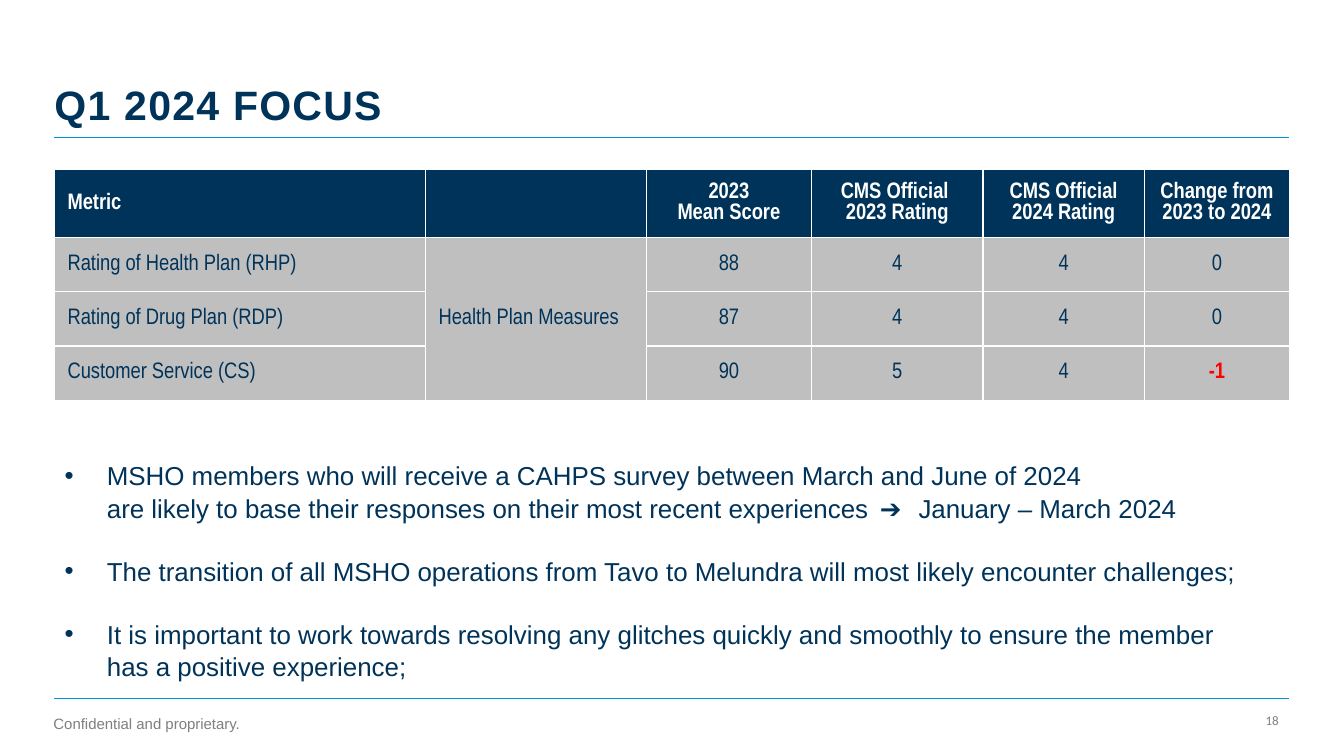
from dataclasses import dataclass

from lxml.etree import SubElement
from pptx import Presentation
from pptx.dml.color import RGBColor
from pptx.enum.shapes import MSO_CONNECTOR
from pptx.enum.text import MSO_ANCHOR as Anchor, MSO_AUTO_SIZE as AutoSize, PP_ALIGN as Align
from pptx.oxml.ns import qn
from pptx.slide import Slide
from pptx.util import Emu, Pt

EMU_PER_PX = 9144
NAVY = RGBColor(0x00, 0x33, 0x59)
BLUE = RGBColor(0x00, 0x94, 0xD7)
GREY = RGBColor(0x7F, 0x7F, 0x7F)
SILVER = RGBColor(0xBF, 0xBF, 0xBF)
RED = RGBColor(0xFF, 0x00, 0x00)
WHITE = RGBColor(0xFF, 0xFF, 0xFF)

LEFT, RIGHT = 54, 1278
RULE_TOPS = (136, 693)
COLUMN_WIDTHS = (368, 219, 164, 170, 160, 144)
ROW_HEIGHTS = (67, 54, 54, 54)
TEXT_COLUMNS = 2
MEASURE_COLUMN = 1
ARROW = " ➔ "

TABLE_ROWS = (
    ("Metric", "", "2023\nMean Score", "CMS Official \v2023 Rating",
     "CMS Official 2024 Rating", "Change from 2023 to 2024"),
    ("Rating of Health Plan (RHP)", "Health Plan Measures", "88", "4", "4", "0"),
    ("Rating of Drug Plan (RDP)", "", "87", "4", "4", "0"),
    ("Customer Service (CS)", "", "90", "5", "4", "-1"),
)
BULLETS = (
    "MSHO members who will receive a CAHPS survey between March and June of 2024 \v"
    "are likely to base their responses on their most recent experiences ➔ January – March 2024",
    "The transition of all MSHO operations from Tavo to Melundra will most likely encounter challenges;",
    "It is important to work towards resolving any glitches quickly and smoothly to ensure the member\v"
    "has a positive experience;",
)


@dataclass(frozen=True)
class Box:
    left: int
    top: int
    width: int
    height: int

    def emu(self) -> tuple[Emu, ...]:
        return tuple(px(n) for n in (self.left, self.top, self.width, self.height))


@dataclass(frozen=True)
class FooterText:
    text: str
    box: Box
    margins: tuple[int, int]
    font_name: str
    size: float
    alignment: Align


FOOTERS = (
    FooterText("Confidential and proprietary.", Box(53, 706, 218, 21), (0, 0),
               "Arial", 10.7, Align.LEFT),
    FooterText("18", Box(967, 707, 311, 20), (10, 5), "Calibri", 9.3, Align.RIGHT),
)


def px(length: int) -> Emu:
    return Emu(length * EMU_PER_PX)


def style_font(font, name: str, size: float, color: RGBColor, bold: bool = False) -> None:
    font.name = name
    font.size = Pt(size)
    font.bold = bold
    font.color.rgb = color


def set_margins(target, horizontal: int, vertical: int) -> None:
    target.margin_left = target.margin_right = px(horizontal)
    target.margin_top = target.margin_bottom = px(vertical)


def place(shape, box: Box) -> None:
    shape.left, shape.top, shape.width, shape.height = box.emu()


def track(run, hundredths: int) -> None:
    run._r.get_or_add_rPr().set("spc", str(hundredths))


def add_rule(slide: Slide, top: int) -> None:
    rule = slide.shapes.add_connector(MSO_CONNECTOR.STRAIGHT, px(LEFT), px(top), px(RIGHT), px(top))
    rule.line.color.rgb = BLUE
    rule.line.width = Pt(0.75)
    SubElement(rule._element.spPr, qn("a:effectLst"))


def add_footer(slide: Slide, footer: FooterText) -> None:
    frame = slide.shapes.add_textbox(*footer.box.emu()).text_frame
    frame.word_wrap = True
    frame.vertical_anchor = Anchor.BOTTOM
    set_margins(frame, *footer.margins)
    paragraph = frame.paragraphs[0]
    paragraph.text = footer.text
    paragraph.alignment = footer.alignment
    style_font(paragraph.font, footer.font_name, footer.size, GREY)


def fill_title(slide: Slide) -> None:
    title = slide.shapes.title
    place(title, Box(LEFT, 16, 1017, 112))
    frame = title.text_frame
    frame.auto_size = AutoSize.NONE
    frame.vertical_anchor = Anchor.BOTTOM
    set_margins(frame, 0, 0)
    paragraph = frame.paragraphs[0]
    paragraph.text = "Q1 2024 FOCUS"
    paragraph.alignment = Align.LEFT
    paragraph.line_spacing = 0.9
    style_font(paragraph.font, "Arial", 29.3, NAVY, True)
    track(paragraph.runs[0], 90)


def add_ratings_table(slide: Slide) -> None:
    box = Box(LEFT, 168, sum(COLUMN_WIDTHS), sum(ROW_HEIGHTS))
    table = slide.shapes.add_table(len(ROW_HEIGHTS), len(COLUMN_WIDTHS), *box.emu()).table
    table.horz_banding = False
    for column, width in zip(table.columns, COLUMN_WIDTHS):
        column.width = px(width)
    for row, height in zip(table.rows, ROW_HEIGHTS):
        row.height = px(height)
    for row_index, texts in enumerate(TABLE_ROWS):
        header = row_index == 0
        for column_index, text in enumerate(texts):
            cell = table.cell(row_index, column_index)
            cell.fill.solid()
            cell.fill.fore_color.rgb = NAVY if header else SILVER
            cell.vertical_anchor = Anchor.MIDDLE
            set_margins(cell, 13, 7)
            cell.text_frame.text = text
            negative = text.startswith("-")
            color = WHITE if header else RED if negative else NAVY
            for paragraph in cell.text_frame.paragraphs:
                paragraph.alignment = Align.LEFT if column_index < TEXT_COLUMNS else Align.CENTER
                style_font(paragraph.font, "Arial Narrow", 16, color, header or negative)
    table.cell(1, MEASURE_COLUMN).merge(table.cell(len(ROW_HEIGHTS) - 1, MEASURE_COLUMN))


def add_bullet(paragraph) -> None:
    properties = paragraph._p.get_or_add_pPr()
    properties.set("marL", str(px(42)))
    properties.set("indent", str(px(-42)))
    SubElement(properties, qn("a:buFont"), typeface="Arial")
    SubElement(properties, qn("a:buChar"), char="•")


def fill_bullets(slide: Slide) -> None:
    body = slide.placeholders[1]
    place(body, Box(LEFT, 450, 1225, 229))
    frame = body.text_frame
    frame.auto_size = AutoSize.NONE
    frame.word_wrap = True
    frame.vertical_anchor = Anchor.TOP
    set_margins(frame, 10, 5)
    for index, text in enumerate(BULLETS):
        paragraph = frame.paragraphs[0] if index == 0 else frame.add_paragraph()
        before, arrow, after = text.partition(ARROW)
        paragraph.text = before
        if arrow:
            arrow_run = paragraph.add_run()
            arrow_run.text = arrow
            track(arrow_run, 350)
            paragraph.add_run().text = after
        add_bullet(paragraph)
        paragraph.alignment = Align.LEFT
        paragraph.line_spacing = 1.04
        paragraph.space_before = Pt(22 if index else 0)
        style_font(paragraph.font, "Arial", 18.5, NAVY)


def main() -> None:
    presentation = Presentation()
    presentation.slide_width = px(1333)
    presentation.slide_height = px(750)
    slide = presentation.slides.add_slide(presentation.slide_layouts[1])
    for top in RULE_TOPS:
        add_rule(slide, top)
    for footer in FOOTERS:
        add_footer(slide, footer)
    fill_title(slide)
    add_ratings_table(slide)
    fill_bullets(slide)
    presentation.save("out.pptx")


if __name__ == "__main__":
    main()
